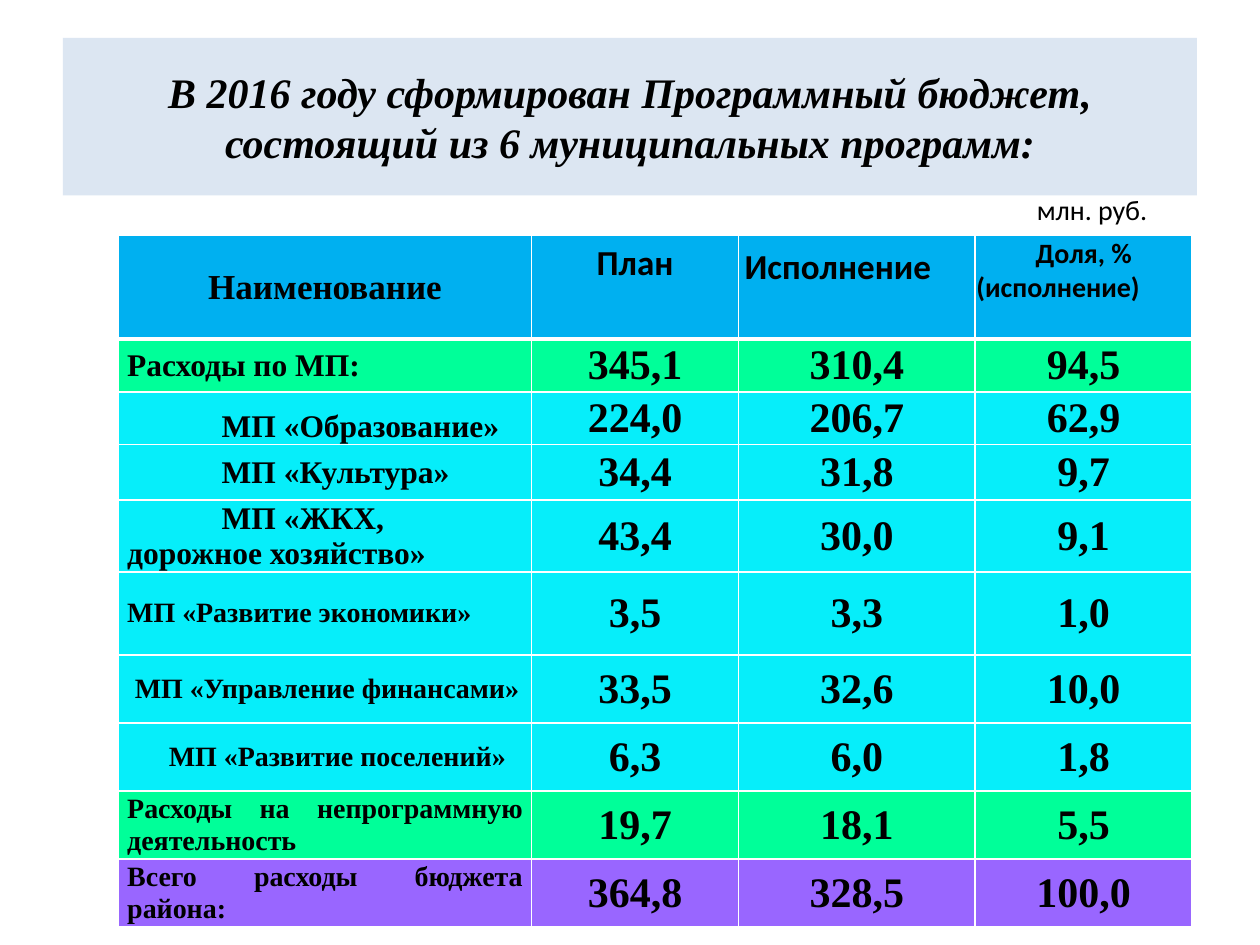
from lxml import etree
from pptx import Presentation
from pptx.dml.color import RGBColor
from pptx.enum.shapes import MSO_SHAPE
from pptx.enum.text import MSO_ANCHOR, PP_ALIGN
from pptx.oxml.ns import qn
from pptx.util import Inches, Pt

LEFT, CENTER, JUSTIFY = PP_ALIGN.LEFT, PP_ALIGN.CENTER, PP_ALIGN.JUSTIFY
TOP, MIDDLE, BOTTOM = MSO_ANCHOR.TOP, MSO_ANCHOR.MIDDLE, MSO_ANCHOR.BOTTOM
SERIF, SANS = "Times New Roman", "Calibri"
BLACK = RGBColor(0x00, 0x00, 0x00)
PALE_BLUE = RGBColor(0xDC, 0xE6, 0xF2)
BLUE = RGBColor(0x00, 0xB0, 0xF0)
GREEN = RGBColor(0x00, 0xFF, 0x99)
CYAN = RGBColor(0x06, 0xEE, 0xFA)
PURPLE = RGBColor(0x99, 0x66, 0xFF)


def write(frame, text, size, font=SERIF, align=LEFT, indent=0, bold=True, italic=False):
    """Fill the first paragraph; a vertical tab in the text is a line break."""
    para = frame.paragraphs[0]
    para.text = text
    para.alignment = align
    if indent:
        para._p.get_or_add_pPr().set("indent", str(Inches(indent)))
    for span in para.runs:
        span.font.name, span.font.size = font, Pt(size)
        span.font.bold, span.font.italic = bold, italic
        span.font.color.rgb = BLACK


def style_cell(cell, fill, margins, anchor=MIDDLE, top=1, bottom=1):
    """Set white borders (widths in points), fill, margins and anchor."""
    properties = cell._tc.get_or_add_tcPr()
    for tag, width in (("a:lnL", 1), ("a:lnR", 1), ("a:lnT", top), ("a:lnB", bottom)):
        line = etree.SubElement(properties, qn(tag), w=str(Pt(width)))
        solid = etree.SubElement(line, qn("a:solidFill"))
        etree.SubElement(solid, qn("a:srgbClr"), val="FFFFFF")
    cell.fill.solid()
    cell.fill.fore_color.rgb = fill
    cell.margin_left, cell.margin_top, cell.margin_right, cell.margin_bottom = map(Inches, margins)
    cell.vertical_anchor = anchor


deck = Presentation()
deck.slide_width, deck.slide_height = Inches(10), Inches(7.5)
page = deck.slides.add_slide(deck.slide_layouts[6])

# Title band
band = page.shapes.add_shape(MSO_SHAPE.RECTANGLE, Inches(0.5), Inches(0.3), Inches(9), Inches(1.25))
band.shadow.inherit = False
band.fill.solid()
band.fill.fore_color.rgb = PALE_BLUE
band.line.fill.background()
band.text_frame.word_wrap = True
band.text_frame.vertical_anchor = MIDDLE
write(band.text_frame, "В 2016 году сформирован Программный бюджет, состоящий из 6 муниципальных программ:",
      24, align=CENTER, italic=True)

# Budget table
widths = [3.28, 1.64, 1.88, 1.72]
heights = [0.82, 0.42, 0.42, 0.44, 0.57, 0.66, 0.54, 0.54, 0.54, 0.54]
table = page.shapes.add_table(len(heights), len(widths), Inches(0.94), Inches(1.87),
                              Inches(sum(widths)), Inches(sum(heights))).table
table.horz_banding = False
for column, width in zip(table.columns, widths):
    column.width = Inches(width)
for row, height in zip(table.rows, heights):
    row.height = Inches(height)

# Header: text, size, font, alignment, first-line indent, anchor, margins
header = [
    ("Наименование", 20, SERIF, CENTER, 0, MIDDLE, (0.01, 0.01, 0.01, 0)),
    ("План", 20, SANS, CENTER, 0, TOP, (0.1, 0.05, 0.1, 0.05)),
    ("Исполнение", 20, SANS, LEFT, 0, TOP, (0.05, 0.08, 0.01, 0)),
    ("Доля, %\v(исполнение)", 16, SANS, LEFT, 0.47, TOP, (0.01, 0.01, 0.01, 0)),
]
for column, (text, size, font, align, indent, anchor, margins) in enumerate(header):
    cell = table.cell(0, column)
    style_cell(cell, BLUE, margins, anchor, bottom=3)
    write(cell.text_frame, text, size, font, align, indent)

# Body: name, size, alignment, first-line indent, fill, values
body = [
    ("Расходы по МП:", 18, LEFT, 0, GREEN, "345,1 310,4 94,5"),
    ("МП «Образование»", 18, LEFT, 0.75, CYAN, "224,0 206,7 62,9"),
    ("МП «Культура»", 18, LEFT, 0.75, CYAN, "34,4 31,8 9,7"),
    ("МП «ЖКХ,\vдорожное хозяйство»", 18, LEFT, 0.75, CYAN, "43,4 30,0 9,1"),
    ("МП «Развитие экономики»", 16, JUSTIFY, 0, CYAN, "3,5 3,3 1,0"),
    ("МП «Управление финансами»", 16, JUSTIFY, 0.06, CYAN, "33,5 32,6 10,0"),
    ("МП «Развитие поселений»", 16, JUSTIFY, 0.33, CYAN, "6,3 6,0 1,8"),
    ("Расходы на непрограммную деятельность", 16, JUSTIFY, 0, GREEN, "19,7 18,1 5,5"),
    ("Всего расходы бюджета района:", 16, JUSTIFY, 0, PURPLE, "364,8 328,5 100,0"),
]
for row, (name, size, align, indent, fill, values) in enumerate(body, start=1):
    for column in range(len(widths)):
        anchor = BOTTOM if (row, column) == (2, 0) else MIDDLE
        style_cell(table.cell(row, column), fill, (0.07, 0, 0.07, 0), anchor, top=3 if row == 1 else 1)
    write(table.cell(row, 0).text_frame, name, size, align=align, indent=indent)
    for column, value in enumerate(values.split(), start=1):
        write(table.cell(row, column).text_frame, value, 24, align=CENTER)

# Unit note
note = page.shapes.add_textbox(Inches(8.13), Inches(1.48), Inches(1.48), Inches(0.37))
note.text_frame.word_wrap = True
write(note.text_frame, "млн. руб.", 16, SANS, bold=False)

deck.save("out.pptx")
